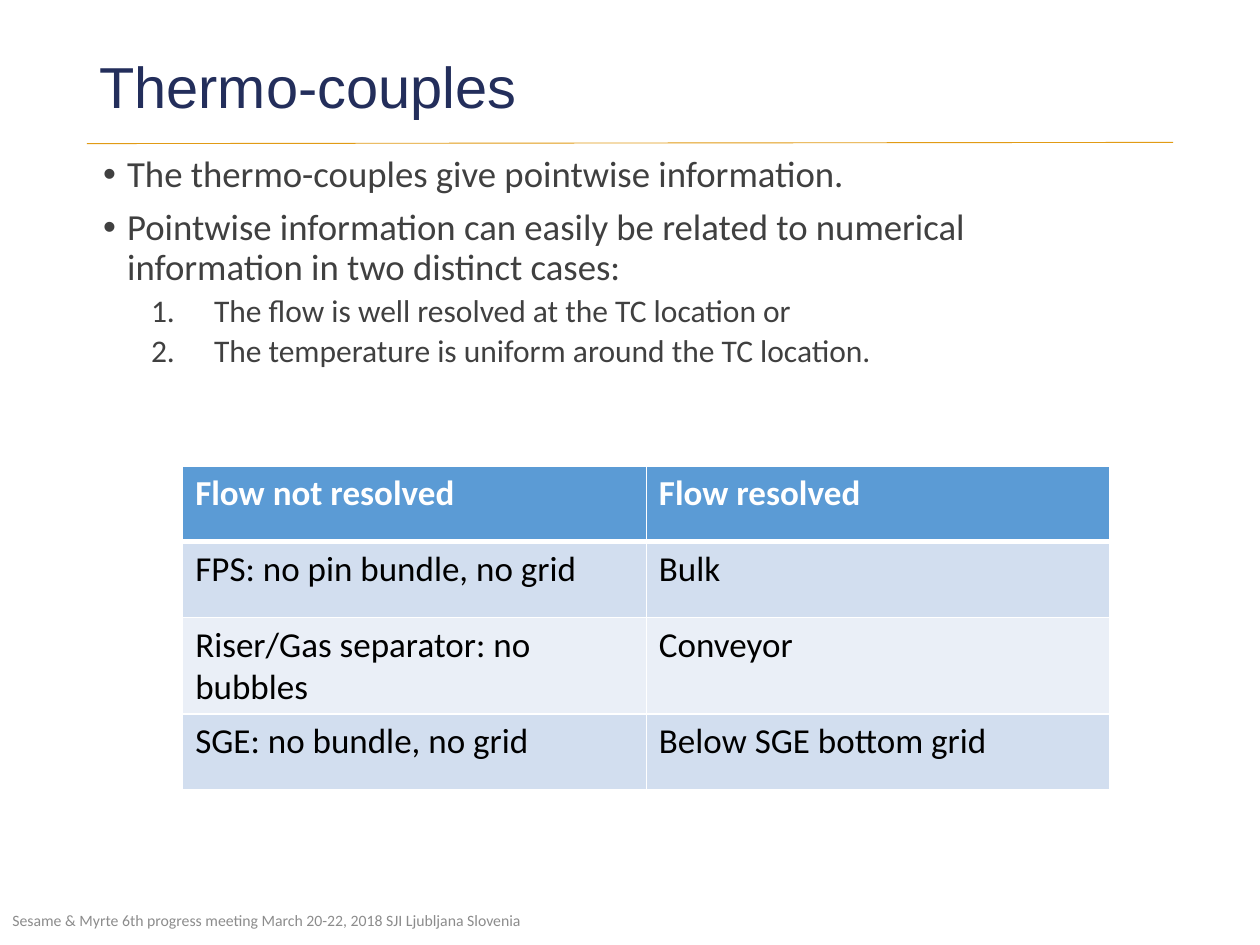
from lxml import etree
from pptx import Presentation
from pptx.dml.color import RGBColor
from pptx.enum.shapes import MSO_CONNECTOR
from pptx.enum.text import MSO_ANCHOR
from pptx.oxml.ns import qn
from pptx.util import Inches, Pt

STRAIGHT = MSO_CONNECTOR.STRAIGHT
TOP, MIDDLE = MSO_ANCHOR.TOP, MSO_ANCHOR.MIDDLE

NAVY, GOLD, DARK, GREY = "232E5B", "E19B15", "404040", "8C8C8C"
WHITE, BLACK, HEADER = "FFFFFF", "000000", "5B9BD5"
BANDS = ("D2DEEF", "EAEFF7")

BULLETS = (
    "The thermo-couples give pointwise information.",
    "Pointwise information can easily be related to numerical "
    "information in two distinct cases:",
)
CASES = (
    "The flow is well resolved at the TC location or",
    "The temperature is uniform around the TC location.",
)
FLOW_ROWS = (
    ("Flow not resolved", "Flow resolved"),
    ("FPS: no pin bundle, no grid", "Bulk"),
    ("Riser/Gas separator: no bubbles", "Conveyor"),
    ("SGE: no bundle, no grid", "Below SGE bottom grid"),
)


def color(value):
    return RGBColor.from_string(value)


def set_font(paragraph, size, fill, name="Calibri", bold=False):
    font = paragraph.font
    font.name, font.size, font.bold = name, Pt(size), bold
    font.color.rgb = color(fill)


def add_frame(slide, box, anchor):
    frame = slide.shapes.add_textbox(*map(Inches, box)).text_frame
    frame.word_wrap = True
    frame.vertical_anchor = anchor
    return frame


def add_title(slide, box, text):
    left, top, width, height = box
    # Rule under the title, rising slightly to the right
    bottom = top + height
    ends = (left, bottom, left + width, bottom - 0.01)
    rule = slide.shapes.add_connector(STRAIGHT, *map(Inches, ends))
    rule.line.color.rgb = color(GOLD)
    rule.line.width = Pt(0.5)
    etree.SubElement(rule._element.spPr, qn("a:effectLst"))
    # Title text
    paragraph = add_frame(slide, box, MIDDLE).paragraphs[0]
    paragraph.text = text
    paragraph.line_spacing = 0.9
    set_font(paragraph, 33, NAVY, "Arial")


def set_marker(paragraph, tag, margin, hanging, **attributes):
    properties = paragraph._p.get_or_add_pPr()
    properties.set("marL", str(Inches(margin)))
    properties.set("indent", str(-Inches(hanging)))
    if tag == "a:buChar":
        etree.SubElement(properties, qn("a:buFont"), typeface="Arial")
    etree.SubElement(properties, qn(tag), **attributes)


def add_body(slide, box):
    frame = add_frame(slide, box, TOP)
    items = [(text, 0) for text in BULLETS] + [(text, 1) for text in CASES]
    for index, (text, level) in enumerate(items):
        paragraph = frame.add_paragraph() if index else frame.paragraphs[0]
        paragraph.text = text
        paragraph.level = level
        if level:
            set_marker(paragraph, "a:buAutoNum", 0.88, 0.5, type="arabicPeriod")
        else:
            set_marker(paragraph, "a:buChar", 0.19, 0.19, char="•")
        paragraph.line_spacing = 0.9
        if index:
            paragraph.space_before = Pt(3.8 if level else 7.5)
        set_font(paragraph, 18 if level else 21, DARK)


def set_borders(cell, bottom_width):
    properties = cell._tc.get_or_add_tcPr()
    for side, width in zip("LRTB", (1, 1, 1, bottom_width)):
        line = etree.SubElement(properties, qn(f"a:ln{side}"), w=str(Pt(width)))
        fill = etree.SubElement(line, qn("a:solidFill"))
        etree.SubElement(fill, qn("a:srgbClr"), val=WHITE)


def add_flow_table(slide, box):
    shape = slide.shapes.add_table(
        len(FLOW_ROWS), len(FLOW_ROWS[0]), *map(Inches, box))
    for row, texts in enumerate(FLOW_ROWS):
        is_header = row == 0
        for column, text in enumerate(texts):
            cell = shape.table.cell(row, column)
            cell.text = text
            set_borders(cell, 3 if is_header else 1)
            cell.fill.solid()
            cell.fill.fore_color.rgb = color(
                HEADER if is_header else BANDS[(row - 1) % 2])
            set_font(cell.text_frame.paragraphs[0], 20,
                     WHITE if is_header else BLACK, bold=is_header)


def add_footer(slide, box, text):
    paragraph = add_frame(slide, box, MIDDLE).paragraphs[0]
    paragraph.text = text
    set_font(paragraph, 9, GREY)


def main():
    presentation = Presentation()
    presentation.slide_width = Inches(10)
    presentation.slide_height = Inches(7.5)
    slide = presentation.slides.add_slide(presentation.slide_layouts[6])
    add_title(slide, (0.69, 0.28, 8.62, 0.86), "Thermo-couples")
    add_body(slide, (0.72, 1.19, 8.09, 2.13))
    add_flow_table(slide, (1.45, 3.7, 7.36, 2.4))
    add_footer(slide, (0, 7.1, 6, 0.4),
               "Sesame & Myrte 6th progress meeting March 20-22, 2018 "
               "SJI Ljubljana Slovenia")
    presentation.save("out.pptx")


if __name__ == "__main__":
    main()
